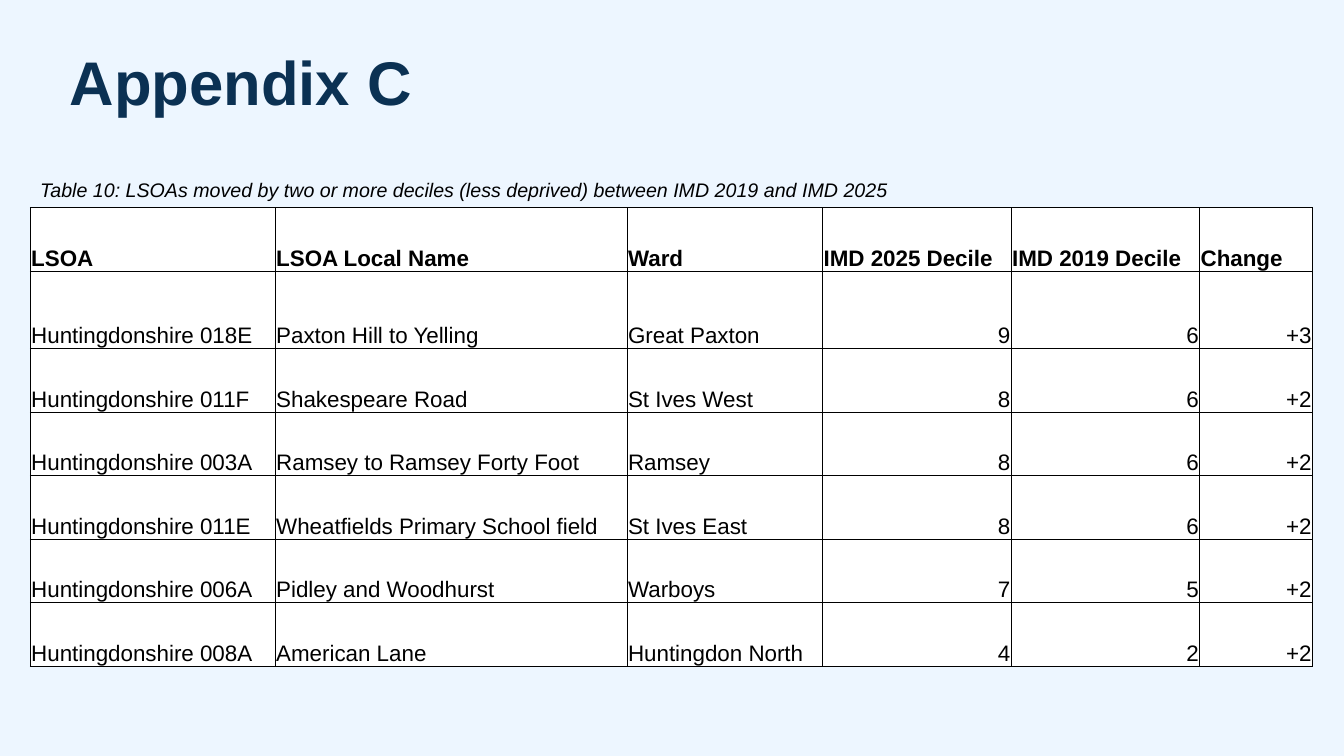
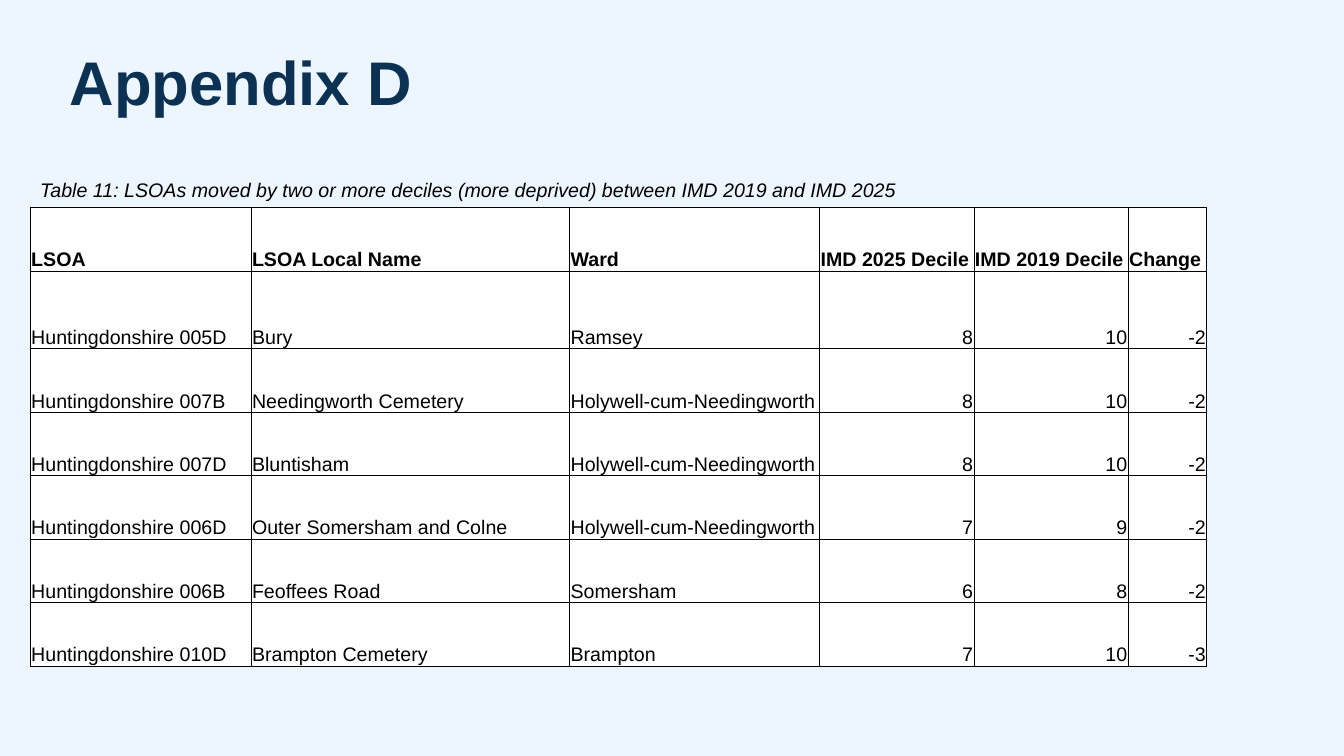
import dataclasses

import lxml.etree
import pptx
import pptx.dml.color
import pptx.enum.text
import pptx.oxml.ns
import pptx.util

Inches = pptx.util.Inches
Pt = pptx.util.Pt
Align = pptx.enum.text.PP_ALIGN
Anchor = pptx.enum.text.MSO_ANCHOR
AutoSize = pptx.enum.text.MSO_AUTO_SIZE


@dataclasses.dataclass(frozen=True)
class Theme:
    font: str = "Arial"
    background: str = "EDF6FF"
    heading: str = "0B3153"
    ink: str = "000000"
    cell: str = "FFFFFF"
    title_size: int = 44
    caption_size: int = 14
    border_width: float = 0.5


THEME = Theme()
TITLE_BOX = (0.69, 0.52, 11.5, 0.88)
CAPTION_BOX = (0.3, 1.72, 9.55, 0.34)
TABLE_ORIGIN = (0.3, 2.06)
ROW_HEIGHT = 0.63
FIRST_BODY_ROW_HEIGHT = 0.77
TEXT_COLUMNS = 3
HEADERS = ("LSOA", "LSOA Local Name", "Ward",
           "IMD 2025 Decile", "IMD 2019 Decile", "Change")

APPENDICES = (
    {
        "title": "Appendix C",
        "caption": "Table 10: LSOAs moved by two or more deciles (less deprived) between IMD 2019 and IMD 2025",
        "widths": (2.43, 3.49, 1.94, 1.87, 1.87, 1.12),
        "size": 16,
        "body_spacing": 2.0,
        "rows": (
            ("Huntingdonshire 018E", "Paxton Hill to Yelling", "Great Paxton", "9", "6", "+3"),
            ("Huntingdonshire 011F", "Shakespeare Road", "St Ives West", "8", "6", "+2"),
            ("Huntingdonshire 003A", "Ramsey to Ramsey Forty Foot", "Ramsey", "8", "6", "+2"),
            ("Huntingdonshire 011E", "Wheatfields Primary School field", "St Ives East", "8", "6", "+2"),
            ("Huntingdonshire 006A", "Pidley and Woodhurst", "Warboys", "7", "5", "+2"),
            ("Huntingdonshire 008A", "American Lane", "Huntingdon North", "4", "2", "+2"),
        ),
    },
    {
        "title": "Appendix D",
        "caption": "Table 11: LSOAs moved by two or more deciles (more deprived) between IMD 2019 and IMD 2025",
        "widths": (2.19, 3.16, 2.48, 1.53, 1.53, 0.78),
        "size": 14,
        "body_spacing": 1.0,
        "rows": (
            ("Huntingdonshire 005D", "Bury", "Ramsey", "8", "10", "-2"),
            ("Huntingdonshire 007B", "Needingworth Cemetery", "Holywell-cum-Needingworth", "8", "10", "-2"),
            ("Huntingdonshire 007D", "Bluntisham", "Holywell-cum-Needingworth", "8", "10", "-2"),
            ("Huntingdonshire 006D", "Outer Somersham and Colne", "Holywell-cum-Needingworth", "7", "9", "-2"),
            ("Huntingdonshire 006B", "Feoffees Road", "Somersham", "6", "8", "-2"),
            ("Huntingdonshire 010D", "Brampton Cemetery", "Brampton", "7", "10", "-3"),
        ),
    },
)


def rgb(value):
    return pptx.dml.color.RGBColor.from_string(value)


def paint(fill, color):
    fill.solid()
    fill.fore_color.rgb = rgb(color)


def style(para, size, color, bold=False, italic=False):
    font = para.font
    font.name = THEME.font
    font.size = Pt(size)
    font.bold = bold
    font.italic = italic
    font.color.rgb = rgb(color)


def set_margins(target, left, top, right, bottom):
    target.margin_left = Inches(left)
    target.margin_top = Inches(top)
    target.margin_right = Inches(right)
    target.margin_bottom = Inches(bottom)


def add_title(page, text, box):
    title = page.shapes.title
    title.left, title.top, title.width, title.height = map(Inches, box)
    frame = title.text_frame
    frame.text = text
    frame.auto_size = AutoSize.NONE
    frame.vertical_anchor = Anchor.TOP
    set_margins(frame, 0, 0, 0, 0)
    para = frame.paragraphs[0]
    para.alignment = Align.LEFT
    para.line_spacing = 0.9
    para.space_before = Pt(0)
    para.space_after = Pt(6)
    style(para, THEME.title_size, THEME.heading, bold=True)


def add_caption(page, text, box):
    frame = page.shapes.add_textbox(*map(Inches, box)).text_frame
    frame.word_wrap = True
    frame.auto_size = AutoSize.SHAPE_TO_FIT_TEXT
    frame.text = text
    style(frame.paragraphs[0], THEME.caption_size, THEME.ink, italic=True)


def add_borders(cell):
    qn = pptx.oxml.ns.qn
    properties = cell._tc.get_or_add_tcPr()
    for position, side in enumerate(("lnL", "lnR", "lnT", "lnB")):
        line = lxml.etree.Element(qn(f"a:{side}"), w=str(Pt(THEME.border_width)))
        fill = lxml.etree.SubElement(line, qn("a:solidFill"))
        lxml.etree.SubElement(fill, qn("a:srgbClr"), val=THEME.ink)
        properties.insert(position, line)


def fill_cell(cell, text, size, header, numeric, spacing):
    cell.text = text
    cell.vertical_anchor = Anchor.BOTTOM
    set_margins(cell, 0.01, 0.01, 0.01, 0)
    paint(cell.fill, THEME.cell)
    add_borders(cell)
    para = cell.text_frame.paragraphs[0]
    para.alignment = Align.RIGHT if numeric else Align.LEFT
    para.line_spacing = spacing
    style(para, size, THEME.ink, bold=header)


def add_decile_table(page, origin, widths, rows, size, body_spacing):
    heights = [ROW_HEIGHT, FIRST_BODY_ROW_HEIGHT] + [ROW_HEIGHT] * (len(rows) - 1)
    box = (*origin, sum(widths), sum(heights))
    table = page.shapes.add_table(len(heights), len(widths), *map(Inches, box)).table
    table.horz_banding = False
    for column, width in zip(table.columns, widths):
        column.width = Inches(width)
    for row, height in zip(table.rows, heights):
        row.height = Inches(height)
    for row_index, values in enumerate((HEADERS, *rows)):
        header = row_index == 0
        for column_index, text in enumerate(values):
            numeric = not header and column_index >= TEXT_COLUMNS
            spacing = 1.0 if header else body_spacing
            fill_cell(table.cell(row_index, column_index), text, size, header, numeric, spacing)


def add_appendix(deck, appendix):
    page = deck.slides.add_slide(deck.slide_layouts.get_by_name("Title Only"))
    add_title(page, appendix["title"], TITLE_BOX)
    add_decile_table(page, TABLE_ORIGIN, appendix["widths"], appendix["rows"],
                     appendix["size"], appendix["body_spacing"])
    add_caption(page, appendix["caption"], CAPTION_BOX)


def main():
    deck = pptx.Presentation()
    deck.slide_width = Inches(13.33)
    deck.slide_height = Inches(7.5)
    paint(deck.slide_master.background.fill, THEME.background)
    for appendix in APPENDICES:
        add_appendix(deck, appendix)
    deck.save("out.pptx")


if __name__ == "__main__":
    main()
